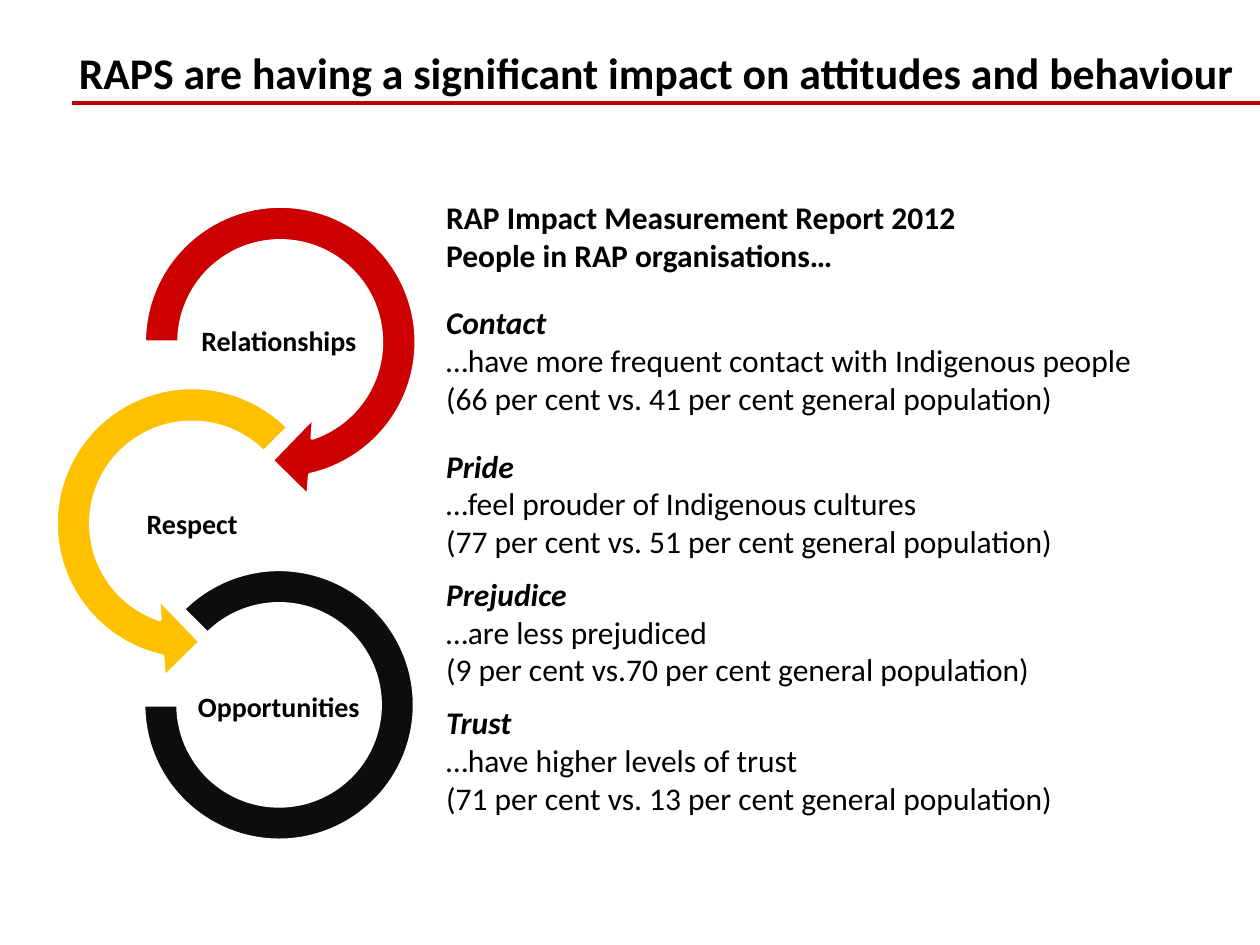
from dataclasses import dataclass

from lxml.etree import SubElement
from pptx import Presentation
from pptx.dml.color import RGBColor
from pptx.enum.shapes import MSO_CONNECTOR, MSO_SHAPE
from pptx.enum.text import MSO_ANCHOR, PP_ALIGN
from pptx.oxml.ns import qn
from pptx.slide import Slide
from pptx.text.text import TextFrame
from pptx.util import Pt


@dataclass(frozen=True)
class Theme:
    font: str = "Calibri"
    text: RGBColor = RGBColor(0, 0, 0)
    white: RGBColor = RGBColor(255, 255, 255)
    rule: RGBColor = RGBColor(0xC0, 0, 0)
    red: RGBColor = RGBColor(0xCC, 0, 0)
    yellow: RGBColor = RGBColor(0xFF, 0xC0, 0)
    black: RGBColor = RGBColor(0x0D, 0x0D, 0x0D)
    title_size: float = 25
    body_size: float = 18
    label_size: float = 16


@dataclass(frozen=True)
class Ring:
    label: str
    shape: MSO_SHAPE
    color: RGBColor
    left: float
    top: float
    size: float
    adjustments: tuple[float, ...]
    label_left: float
    label_top: float


@dataclass(frozen=True)
class Finding:
    heading: str
    claim: str
    figures: str
    gap: float


THEME = Theme()
LABEL_WIDTH, LABEL_HEIGHT = 100, 50.4

RINGS = [
    Ring("Relationships", MSO_SHAPE.CIRCULAR_ARROW, THEME.red, 69.8, 105.1, 180.7,
         (0.11, 11.423, 45, 108, 0.125), 109.4, 170.6),
    Ring("Respect", MSO_SHAPE.LEFT_CIRCULAR_ARROW, THEME.yellow, 19.4, 208.8, 180.7,
         (0.11, 11.423, 63, 189, 0.125), 59.8, 275),
    Ring("Opportunities", MSO_SHAPE.BLOCK_ARC, THEME.black, 82.1, 325.4, 154.8,
         (135, 108, 0.127), 109.4, 379.4),
]

INTRODUCTION = ["RAP Impact Measurement Report 2012", "People in RAP organisations…"]
FINDINGS = [
    Finding("Contact", "…have more frequent contact with Indigenous people",
            "(66 per cent vs. 41 per cent general population)", 17),
    Finding("Pride", "…feel prouder of Indigenous cultures",
            "(77 per cent vs. 51 per cent general population)", 17),
    Finding("Prejudice", "…are less prejudiced",
            "(9 per cent vs.70 per cent general population)", 8.5),
    Finding("Trust", "…have higher levels of trust",
            "(71 per cent vs. 13 per cent general population)", 8.5),
]


def add_text_frame(page: Slide, left: float, top: float, width: float, height: float,
                   insets: tuple[float, float, float, float]) -> TextFrame:
    """Add a wrapping text box; insets run left, top, right, bottom."""
    box = page.shapes.add_textbox(Pt(left), Pt(top), Pt(width), Pt(height))
    frame = box.text_frame
    frame.word_wrap = True
    (frame.margin_left, frame.margin_top,
     frame.margin_right, frame.margin_bottom) = map(Pt, insets)
    return frame


def write_line(frame: TextFrame, text: str, size: float, bold: bool = False,
               italic: bool = False, gap: float = 0):
    """Fill the empty first paragraph, or append a new one."""
    para = frame.add_paragraph() if frame.text else frame.paragraphs[0]
    para.text = text
    para.space_before = Pt(gap)
    font = para.font
    font.name, font.size, font.bold, font.italic = THEME.font, Pt(size), bold, italic
    font.color.rgb = THEME.text
    return para


def add_title(page: Slide) -> None:
    frame = add_text_frame(page, 45, 26, 675, 45, (0, 0, 7.2, 0))
    write_line(frame, "RAPS are having a significant impact on attitudes and behaviour",
               THEME.title_size, bold=True)


def add_title_rule(page: Slide) -> None:
    rule = page.shapes.add_connector(MSO_CONNECTOR.STRAIGHT,
                                     Pt(41), Pt(59), Pt(720), Pt(59))
    rule.line.color.rgb = THEME.rule
    rule.line.width = Pt(2.25)
    SubElement(rule.element.spPr, qn("a:effectLst"))


def add_ring(page: Slide, ring: Ring) -> None:
    shape = page.shapes.add_shape(ring.shape, Pt(ring.left), Pt(ring.top),
                                  Pt(ring.size), Pt(ring.size))
    for index, value in enumerate(ring.adjustments):
        shape.adjustments[index] = value
    shape.shadow.inherit = False
    shape.fill.solid()
    shape.fill.fore_color.rgb = ring.color
    shape.line.color.rgb = THEME.white
    shape.line.width = Pt(2)

    frame = add_text_frame(page, ring.label_left, ring.label_top,
                           LABEL_WIDTH, LABEL_HEIGHT, (0.8, 0.8, 0.8, 0.8))
    frame.vertical_anchor = MSO_ANCHOR.MIDDLE
    para = write_line(frame, ring.label, THEME.label_size, bold=True)
    para.alignment = PP_ALIGN.CENTER
    para.line_spacing = 0.9


def add_findings(page: Slide) -> None:
    frame = add_text_frame(page, 250, 111, 443.5, 379.5, (5, 2.2, 5, 2.2))
    size = THEME.body_size
    for line in INTRODUCTION:
        write_line(frame, line, size, bold=True)
    for finding in FINDINGS:
        write_line(frame, finding.heading, size, bold=True, italic=True, gap=finding.gap)
        write_line(frame, finding.claim, size)
        write_line(frame, finding.figures, size)


def main() -> None:
    deck = Presentation()
    deck.slide_width, deck.slide_height = Pt(720), Pt(540)
    page = deck.slides.add_slide(deck.slide_layouts[6])
    add_title(page)
    for ring in RINGS:
        add_ring(page, ring)
    add_findings(page)
    add_title_rule(page)
    deck.save("out.pptx")


if __name__ == "__main__":
    main()
